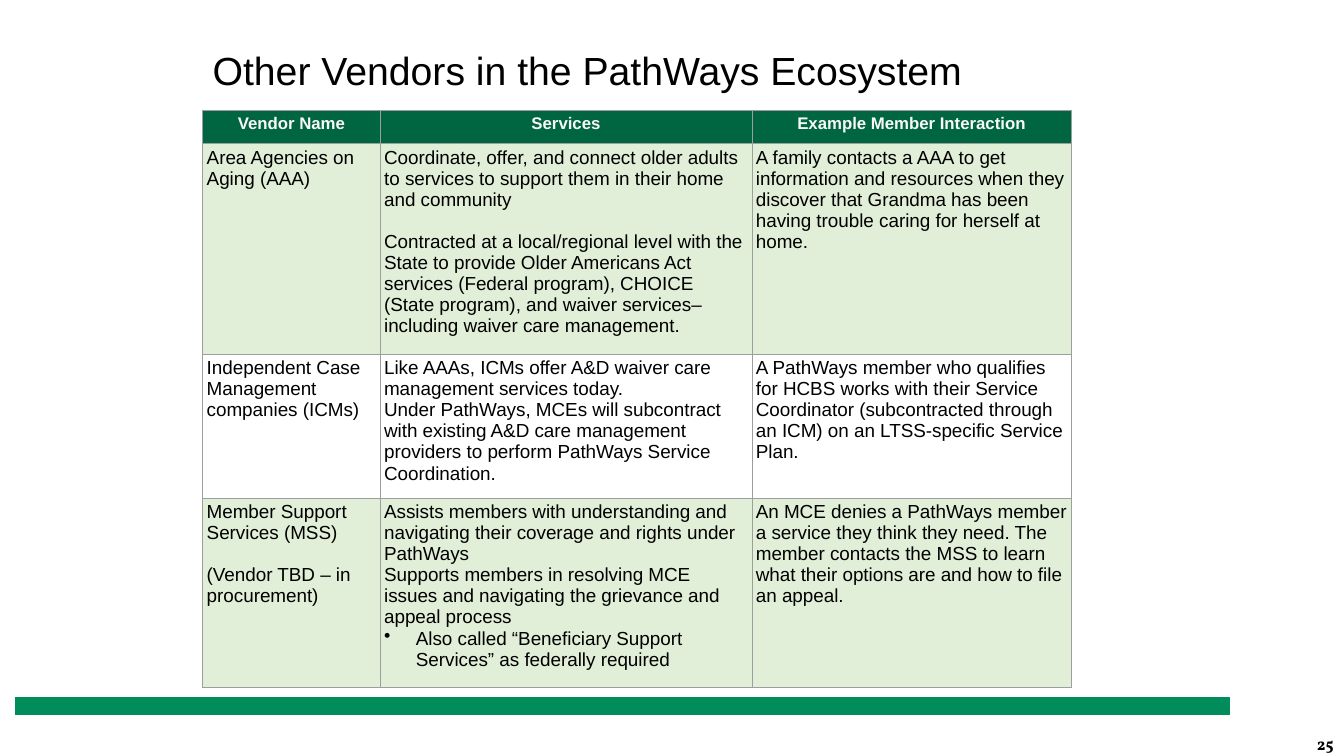
import dataclasses

import pptx
import pptx.dml.color
import pptx.enum.shapes
import pptx.enum.text
import pptx.oxml
import pptx.oxml.ns
import pptx.util
from pptx.util import Cm, Pt

ALIGN = pptx.enum.text.PP_ALIGN
ANCHOR = pptx.enum.text.MSO_ANCHOR


@dataclasses.dataclass(frozen=True)
class Theme:
    text: str = "000000"
    header_text: str = "F8F8F8"
    header_fill: str = "006642"
    band_fill: str = "E1EFD8"
    border: str = "9E9E9E"
    bar: str = "008C5B"
    title_size: float = 28
    header_size: float = 12
    body_size: float = 13.5
    number_size: float = 12
    border_width: float = 0.5
    bar_width: float = 0.75
    face: str = "Arial"
    number_face: str = "Vollkorn"


THEME = Theme()
GAP = {"space_before": Pt(15)}
BULLET = {"bullet": True}

HEADINGS = ["Vendor Name", "Services", "Example Member Interaction"]

# Each cell is a list of (wording, paragraph options).
VENDORS = [
    [
        [("Area Agencies on Aging (AAA)", {})],
        [
            ("Coordinate, offer, and connect older adults to services to support "
             "them in their home and community", {}),
            ("Contracted at a local/regional level with the State to provide Older "
             "Americans Act services (Federal program), CHOICE (State program), and "
             "waiver services–including waiver care management.", GAP),
        ],
        [("A family contacts a AAA to get information and resources when they "
          "discover that Grandma has been having trouble caring for herself at "
          "home.", {})],
    ],
    [
        [("Independent Case Management companies (ICMs)", {})],
        [
            ("Like AAAs, ICMs offer A&D waiver care management services today.", {}),
            ("Under PathWays, MCEs will subcontract with existing A&D care management "
             "providers to perform PathWays Service Coordination.", {}),
        ],
        [("A PathWays member who qualifies for HCBS works with their Service "
          "Coordinator (subcontracted through an ICM) on an LTSS-specific Service "
          "Plan.", {})],
    ],
    [
        [
            ("Member Support Services (MSS)", {}),
            ("(Vendor TBD – in procurement)", GAP),
        ],
        [
            ("Assists members with understanding and navigating their coverage and "
             "rights under PathWays", {}),
            ("Supports members in resolving MCE issues and navigating the grievance "
             "and appeal process", {}),
            ("Also called “Beneficiary Support Services” as federally required", BULLET),
        ],
        [("An MCE denies a PathWays member a service they think they need. The "
          "member contacts the MSS to learn what their options are and how to file "
          "an appeal.", {})],
    ],
]


def rgb(value):
    return pptx.dml.color.RGBColor.from_string(value)


def apply_format(target, values):
    for name, value in values.items():
        setattr(target, name, value)


def add_bullet(paragraph):
    properties = paragraph._p.get_or_add_pPr()
    properties.set("marL", str(Cm(0.8)))
    properties.set("indent", str(-Cm(0.8)))
    properties.append(pptx.oxml.parse_xml(
        f'<a:buChar {pptx.oxml.ns.nsdecls("a")} char="•"/>'))


def write(paragraph, wording, size, color=THEME.text, face=THEME.face, bold=False,
          align=ALIGN.LEFT, space_before=Pt(0), bullet=False):
    apply_format(paragraph, {"alignment": align, "space_before": space_before})
    if bullet:
        add_bullet(paragraph)
    run = paragraph.add_run()
    run.text = wording
    apply_format(run.font, {"name": face, "size": Pt(size), "bold": bold})
    run.font.color.rgb = rgb(color)


def add_title(slide, wording):
    title = slide.shapes.title
    apply_format(title, {"left": Cm(5.11), "top": Cm(0.91),
                         "width": Cm(23.67), "height": Cm(2.11)})
    inset = Cm(0.25)
    apply_format(title.text_frame, {
        "margin_left": inset, "margin_right": inset,
        "margin_top": inset, "margin_bottom": inset,
        "vertical_anchor": ANCHOR.TOP, "word_wrap": True,
        "auto_size": pptx.enum.text.MSO_AUTO_SIZE.NONE})
    write(title.text_frame.paragraphs[0], wording, THEME.title_size)


def add_footer_bar(slide):
    bar = slide.shapes.add_shape(pptx.enum.shapes.MSO_SHAPE.RECTANGLE,
                                 Cm(0.38), Cm(17.58), Cm(30.61), Cm(0.43))
    bar.shadow.inherit = False
    bar.fill.solid()
    bar.fill.fore_color.rgb = rgb(THEME.bar)
    bar.line.color.rgb = rgb(THEME.bar)
    bar.line.width = Pt(THEME.bar_width)


def add_page_number(slide, number):
    box = slide.shapes.add_textbox(Cm(25.68), Cm(18.36), Cm(8.18), Cm(0.76))
    box.text_frame.word_wrap = True
    write(box.text_frame.paragraphs[0], number, THEME.number_size,
          face=THEME.number_face, bold=True, align=ALIGN.RIGHT)


def style_cell(cell, fill):
    """Set insets, thin borders on all sides, and the fill if there is one."""
    inset = Cm(0.1)
    apply_format(cell, {"margin_left": inset, "margin_right": inset,
                        "margin_top": inset, "margin_bottom": inset,
                        "vertical_anchor": ANCHOR.TOP})
    properties = cell._tc.get_or_add_tcPr()
    for side in ("lnL", "lnR", "lnT", "lnB"):
        properties.append(pptx.oxml.parse_xml(
            f'<a:{side} {pptx.oxml.ns.nsdecls("a")} w="{Pt(THEME.border_width)}">'
            f'<a:solidFill><a:srgbClr val="{THEME.border}"/></a:solidFill></a:{side}>'))
    if fill:
        cell.fill.solid()
        cell.fill.fore_color.rgb = rgb(fill)
    else:
        cell.fill.background()


def fill_cell(cell, paragraphs, fill, **text_format):
    style_cell(cell, fill)
    frame = cell.text_frame
    for index, (wording, options) in enumerate(paragraphs):
        paragraph = frame.add_paragraph() if index else frame.paragraphs[0]
        write(paragraph, wording, **text_format, **options)


def add_vendor_table(slide):
    widths = [Cm(4.47), Cm(9.37), Cm(8.05)]
    heights = [Cm(0.84), Cm(5.13), Cm(3.48), Cm(4.57)]
    table = slide.shapes.add_table(len(heights), len(widths), Cm(5.11), Cm(2.78),
                                   sum(widths), sum(heights)).table
    for column, width in zip(table.columns, widths):
        column.width = width
    for row, height in zip(table.rows, heights):
        row.height = height
    for column, heading in enumerate(HEADINGS):
        fill_cell(table.cell(0, column), [(heading, {})], THEME.header_fill,
                  size=THEME.header_size, color=THEME.header_text, bold=True,
                  align=ALIGN.CENTER)
    for row, vendor in enumerate(VENDORS, start=1):
        band = THEME.band_fill if row % 2 else None
        for column, paragraphs in enumerate(vendor):
            fill_cell(table.cell(row, column), paragraphs, band, size=THEME.body_size)


def main():
    deck = pptx.Presentation()
    apply_format(deck, {"slide_width": Cm(33.87), "slide_height": Cm(19.05)})
    slide = deck.slides.add_slide(deck.slide_layouts.get_by_name("Title Only"))
    add_page_number(slide, "25")
    add_footer_bar(slide)
    add_title(slide, "Other Vendors in the PathWays Ecosystem")
    add_vendor_table(slide)
    deck.save("out.pptx")


if __name__ == "__main__":
    main()
